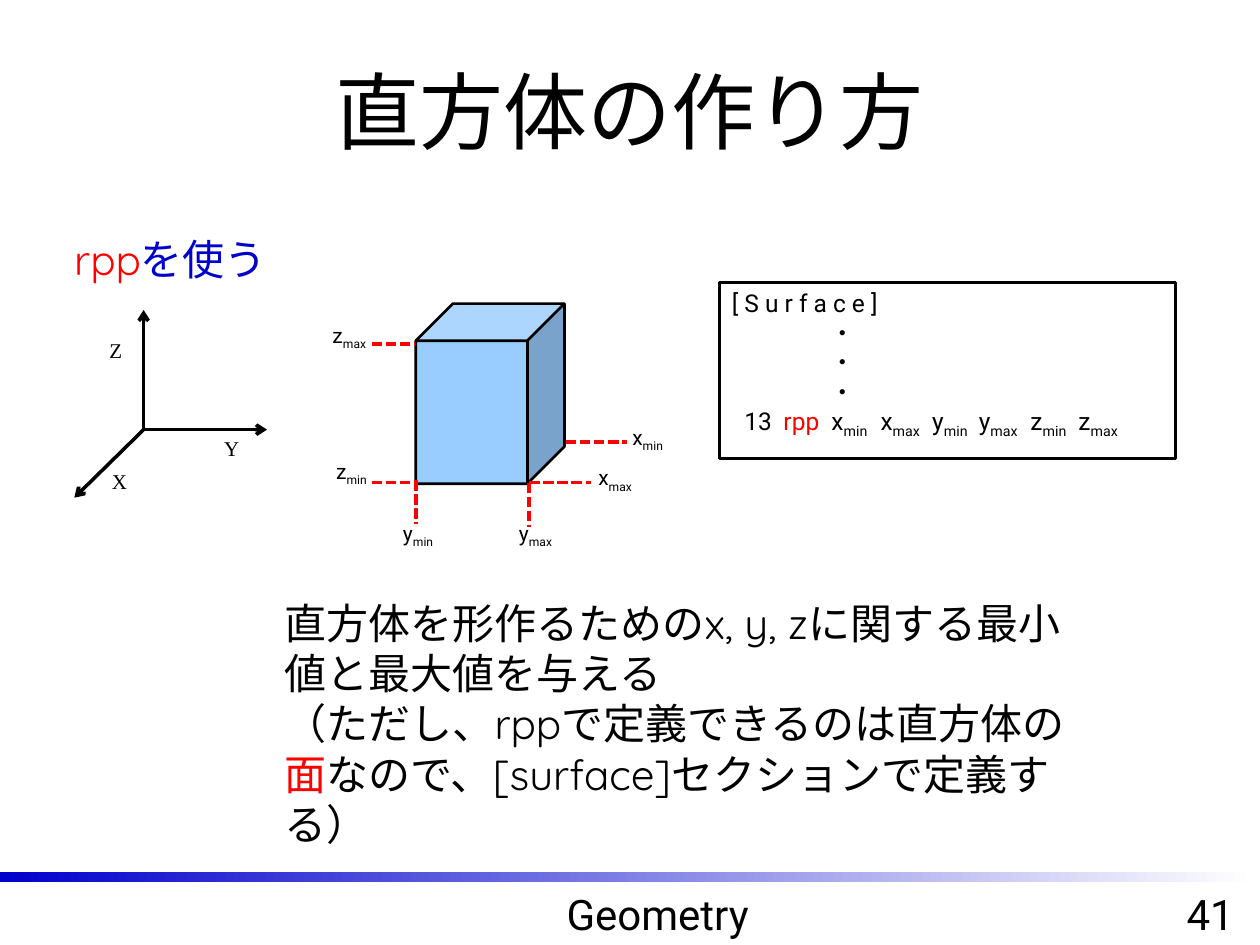
from pptx import Presentation
from pptx.dml.color import RGBColor
from pptx.enum import dml, lang, shapes, text
from pptx.oxml.ns import qn
from pptx.util import Inches, Pt
from lxml import etree

COLORS = {"black": "000000", "white": "FFFFFF", "red": "FF0000",
          "blue": "0000CC", "cube": "99CCFF"}


def rgb(name):
    return RGBColor.from_string(COLORS[name])


def add_span(para, words, font="Quicksand", size=24, color="black", sub=False):
    """Add one formatted piece of text to a paragraph."""
    span = para.add_run()
    span.text = words
    span.font.name = font
    span.font.size = Pt(size)
    span.font.color.rgb = rgb(color)
    span.font.language_id = lang.MSO_LANGUAGE_ID.JAPANESE
    if sub:
        span.font._element.set("baseline", "-25000")


class SlideBuilder:
    """Holds the current page and the shared style of its elements."""

    def __init__(self, page):
        self.page = page

    def title(self, words, left, top, width, height):
        box = self.page.shapes.title
        box.left, box.top = Inches(left), Inches(top)
        box.width, box.height = Inches(width), Inches(height)
        frame = box.text_frame
        frame.vertical_anchor = text.MSO_ANCHOR.MIDDLE
        frame.paragraphs[0].alignment = text.PP_ALIGN.CENTER
        add_span(frame.paragraphs[0], words, size=48)

    def text_box(self, left, top, width, height, wrap=True, centered=False):
        """Add a text box and return its first paragraph and frame."""
        box = self.page.shapes.add_textbox(
            Inches(left), Inches(top), Inches(width), Inches(height))
        frame = box.text_frame
        frame.word_wrap = wrap
        frame.auto_size = text.MSO_AUTO_SIZE.SHAPE_TO_FIT_TEXT
        para = frame.paragraphs[0]
        para.alignment = text.PP_ALIGN.CENTER if centered else text.PP_ALIGN.LEFT
        return para, frame

    def label(self, letter, left, top, width, sub=None, font="Roboto"):
        para, _ = self.text_box(left, top, width, 0.3, wrap=False)
        add_span(para, letter, font=font, size=12)
        if sub:
            add_span(para, sub, font=font, size=12, sub=True)

    def shape(self, kind, left, top, width, height, fill=None, line=None):
        shape = self.page.shapes.add_shape(
            kind, Inches(left), Inches(top), Inches(width), Inches(height))
        shape.shadow.inherit = False
        if fill:
            shape.fill.solid()
            shape.fill.fore_color.rgb = rgb(fill)
        if line:
            shape.line.color.rgb = rgb(line)
            shape.line.width = Pt(1.5)
        else:
            shape.line.fill.background()
        return shape

    def line(self, start, end, color="black", dashed=False, arrow=False):
        points = [Inches(value) for value in (*start, *end)]
        line = self.page.shapes.add_connector(
            shapes.MSO_CONNECTOR.STRAIGHT, *points)
        line.line.color.rgb = rgb(color)
        line.line.width = Pt(2)
        if dashed:
            line.line.dash_style = dml.MSO_LINE.SQUARE_DOT
        properties = line._element.spPr
        if arrow:
            etree.SubElement(properties.find(qn("a:ln")), qn("a:tailEnd"), type="arrow")
        etree.SubElement(properties, qn("a:effectLst"))


def set_tabs(para, stops):
    tabs = etree.SubElement(para._p.get_or_add_pPr(), qn("a:tabLst"))
    for stop in stops:
        etree.SubElement(tabs, qn("a:tab"), pos=str(Inches(stop)), algn="l")


def add_footer(builder):
    bar = builder.shape(shapes.MSO_SHAPE.RECTANGLE, 0, 6.92, 9.96, 0.08)
    bar.fill.gradient()
    bar.fill.gradient_angle = 0
    for stop, position, color in zip(bar.fill.gradient_stops, (0, 1), ("blue", "white")):
        stop.position = position
        stop.color.rgb = rgb(color)
    for words, left, width in (("41", 9.21, 0.79), ("Geometry", 2.4, 5.64)):
        para, _ = builder.text_box(left, 7, width, 0.51, centered=True)
        add_span(para, words, font="Roboto")


def add_axes(builder):
    for end in ((2.12, 3.41), (1.14, 2.46), (0.59, 3.95)):
        builder.line((1.14, 3.41), end, arrow=True)
    for letter, left, top in (("X", 0.79, 3.67), ("Y", 1.68, 3.41), ("Z", 0.77, 2.63)):
        builder.label(letter, left, top, 0.32, font="Times New Roman")


def add_cube(builder):
    cube = builder.shape(shapes.MSO_SHAPE.CUBE, 3.3, 2.41, 1.18, 1.43, "cube", "black")
    cube.adjustments[0] = 0.25
    for letter, sub, left, top, width in (
            ("x", "min", 4.92, 3.32, 0.47), ("x", "max", 4.65, 3.64, 0.5),
            ("y", "max", 4.02, 4.08, 0.5), ("y", "min", 3.1, 4.08, 0.47),
            ("z", "min", 2.57, 3.59, 0.46), ("z", "max", 2.54, 2.51, 0.49)):
        builder.label(letter, left, top, width, sub)
    for start, end in (
            ((2.95, 3.83), (3.31, 3.83)), ((4.49, 3.51), (4.98, 3.51)),
            ((4.2, 3.83), (4.69, 3.83)), ((4.2, 3.83), (4.2, 4.18)),
            ((3.3, 3.81), (3.3, 4.16)), ((2.95, 2.73), (3.29, 2.73))):
        builder.line(start, end, "red", dashed=True)


def add_surface_section(builder):
    style = {"font": "Roboto", "size": 14}
    panel = builder.shape(shapes.MSO_SHAPE.RECTANGLE, 5.71, 2.24, 3.62, 1.4,
                          "white", "black")
    frame = panel.text_frame
    frame.word_wrap = True
    frame.vertical_anchor = text.MSO_ANCHOR.TOP
    paras = [frame.paragraphs[0]] + [frame.add_paragraph() for _ in range(4)]
    for para in paras:
        para.alignment = text.PP_ALIGN.LEFT
    heading, *dots, entry = paras
    add_span(heading, "[ S u r f a c e ]", **style)
    for para in dots:
        para._p.get_or_add_pPr().set("marL", str(Inches(0.78)))
        add_span(para, "・", **style)

    # Surface number, keyword and the six limits, each at its own tab stop
    set_tabs(entry, (0.1, 0.41, 0.79, 1.18, 1.59, 1.96, 2.37, 2.75))
    add_span(entry, "\t13\t", **style)
    add_span(entry, "rpp", color="red", **style)
    for letter in "xyz":
        for limit in ("min", "max"):
            add_span(entry, "\t" + letter, **style)
            add_span(entry, limit, sub=True, **style)


def add_texts(builder):
    para, _ = builder.text_box(0.49, 1.8, 1.75, 0.51)
    add_span(para, "rpp", color="red")
    add_span(para, "を使う", color="blue")

    para, frame = builder.text_box(2.16, 4.69, 6.61, 1.72)
    add_span(para, "直方体を形作るためのx, y, zに関する最小値と最大値を与える")
    para = frame.add_paragraph()
    add_span(para, "（ただし、rppで定義できるのは直方体の")
    add_span(para, "面", color="red")
    add_span(para, "なので、[surface]セクションで定義する）")


def main():
    deck = Presentation()
    deck.slide_width, deck.slide_height = Inches(10), Inches(7.5)
    builder = SlideBuilder(deck.slides.add_slide(deck.slide_layouts[5]))
    builder.title("直方体の作り方", 0.25, 0.25, 9.5, 1.25)
    add_footer(builder)
    add_axes(builder)
    add_cube(builder)
    add_surface_section(builder)
    add_texts(builder)
    deck.save("out.pptx")


if __name__ == "__main__":
    main()
